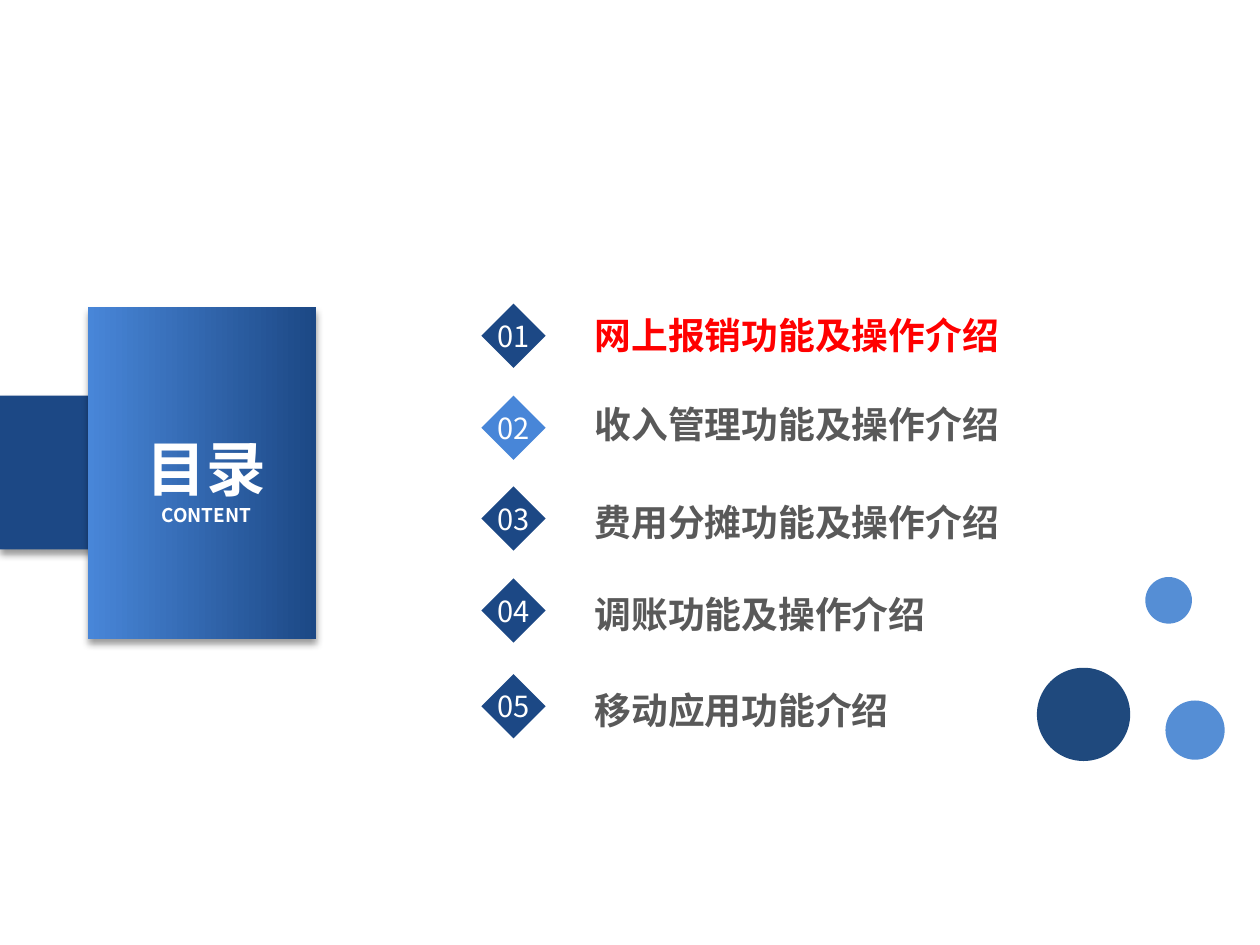
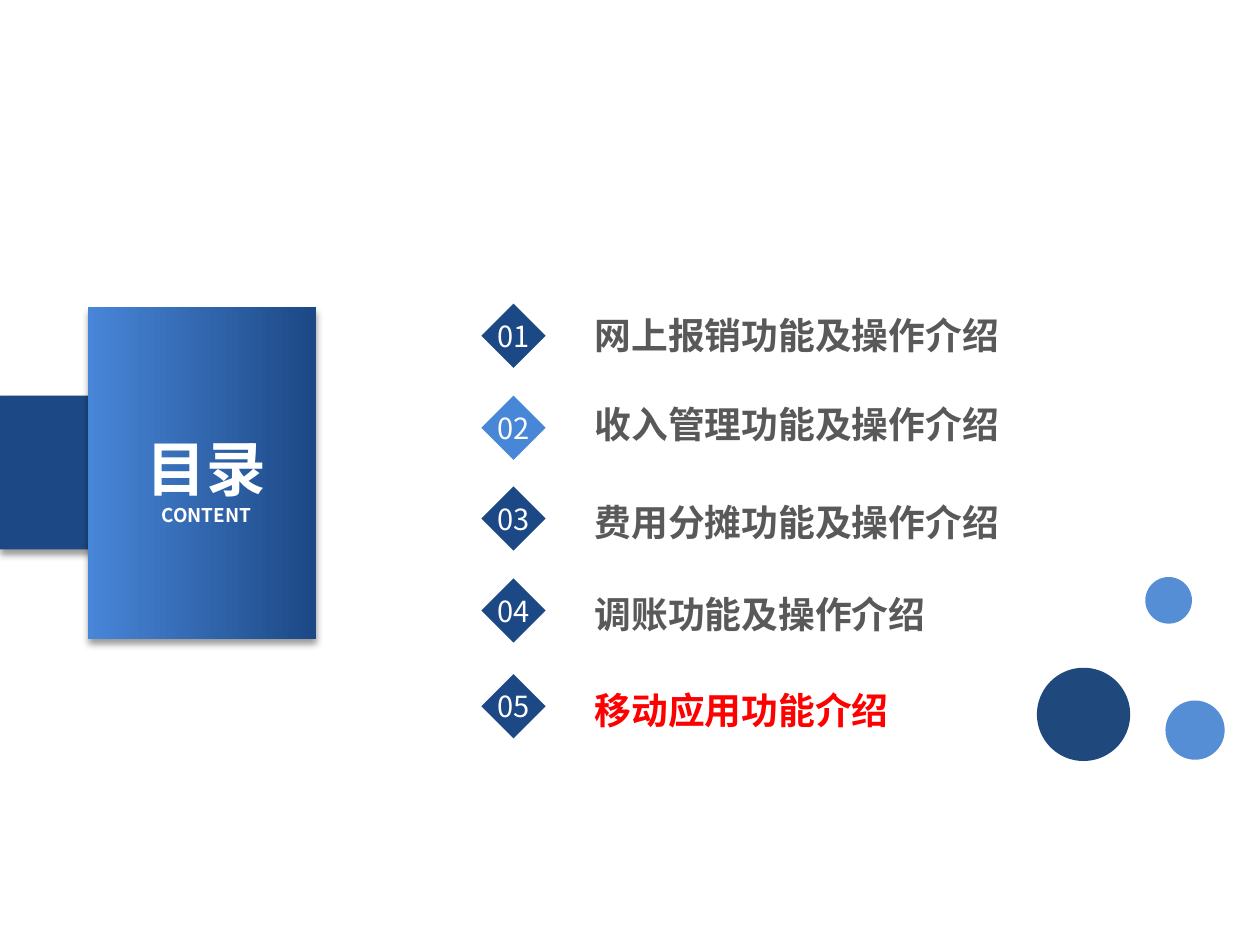
from dataclasses import dataclass

from lxml import etree
from pptx import Presentation
from pptx import util as u
from pptx.dml import color
from pptx.enum import shapes, text
from pptx.oxml import ns

TITLE = "目录"
SUBTITLE = "CONTENT"
SECTIONS = [
    ("网上报销功能及操作介绍", 2.41, 2.63),
    ("收入管理功能及操作介绍", 3.14, 3.34),
    ("费用分摊功能及操作介绍", 3.86, 4.12),
    ("调账功能及操作介绍", 4.59, 4.85),
    ("移动应用功能介绍", 5.35, 5.61),
]
LIGHT_SECTION = 2
ACTIVE_SECTIONS = [1, 5]


@dataclass(frozen=True)
class Theme:
    font: str = "Noto Sans CJK SC"
    navy: str = "1C4885"
    blue: str = "4886D8"
    dark_dot: str = "1F497D"
    light_dot: str = "558ED5"
    label: str = "595959"
    active: str = "FF0000"
    white: str = "FFFFFF"
    shadow: str = "000000"
    title_size: float = 34.1
    subtitle_size: float = 10.8
    number_size: float = 16.6
    label_size: float = 21


THEME = Theme()
DOTS = [
    (9.25, 5.56, 0.47, THEME.light_dot),
    (8.23, 5.3, 0.74, THEME.dark_dot),
    (9.09, 4.58, 0.37, THEME.light_dot),
]
DIAMOND_LEFT, DIAMOND_SIZE = 3.82, 0.51
LABEL_LEFT, LABEL_WIDTH, LABEL_HEIGHT, LABEL_INDENT = 4.33, 3.25, 0.2, 0.39
HEADING_LEFT, HEADING_WIDTH = 1.06, 1.16


def inches(*values):
    return [u.Inches(value) for value in values]


def rgb(value):
    return color.RGBColor.from_string(value)


def add_filled(slide, kind, box, fill):
    shape = slide.shapes.add_shape(kind, *inches(*box))
    shape.shadow.inherit = False
    shape.fill.solid()
    shape.fill.fore_color.rgb = rgb(fill)
    shape.line.fill.background()
    return shape


def add_drop_shadow(shape):
    effects = shape.element.spPr.find(ns.qn("a:effectLst"))
    shadow = etree.SubElement(
        effects, ns.qn("a:outerShdw"), blurRad=str(u.Pt(4)), dist=str(u.Pt(3)),
        dir="5400000", algn="t", rotWithShape="0")
    shade = etree.SubElement(shadow, ns.qn("a:srgbClr"), val=THEME.shadow)
    etree.SubElement(shade, ns.qn("a:alpha"), val="40000")


def write(shape, words, size, ink, bold=False, align=text.PP_ALIGN.CENTER,
          anchor=text.MSO_ANCHOR.TOP, margins=(0.1, 0.05, 0.1, 0.05)):
    frame = shape.text_frame
    frame.text = words
    frame.word_wrap = False
    frame.auto_size = text.MSO_AUTO_SIZE.NONE
    frame.vertical_anchor = anchor
    (frame.margin_left, frame.margin_top,
     frame.margin_right, frame.margin_bottom) = inches(*margins)
    paragraph = frame.paragraphs[0]
    paragraph.alignment = align
    run = paragraph.runs[0]
    run.font.name = THEME.font
    run.font.size = u.Pt(size)
    run.font.bold = bold
    run.font.color.rgb = rgb(ink)
    etree.SubElement(run.font._element, ns.qn("a:ea"), typeface=THEME.font)


def add_heading(slide):
    rectangle = shapes.MSO_SHAPE.RECTANGLE
    band = add_filled(slide, rectangle, (0, 3.14, 2.4, 1.22), THEME.navy)
    panel = add_filled(slide, rectangle, (0.7, 2.44, 1.81, 2.63), THEME.blue)
    panel.fill.gradient()
    panel.fill.gradient_angle = 0
    for stop, position, tint in zip(panel.fill.gradient_stops, (0, 1), (THEME.blue, THEME.navy)):
        stop.position = position
        stop.color.rgb = rgb(tint)
    for shape in (band, panel):
        add_drop_shadow(shape)

    title = slide.shapes.title
    title.left, title.top, title.width, title.height = inches(
        HEADING_LEFT, 3.38, HEADING_WIDTH, 0.63)
    panel.element.addnext(title.element)
    write(title, TITLE, THEME.title_size, THEME.white, bold=True)
    subtitle = slide.shapes.add_textbox(*inches(HEADING_LEFT, 3.95, HEADING_WIDTH, 0.25))
    write(subtitle, SUBTITLE, THEME.subtitle_size, THEME.white, bold=True)


def add_section(slide, number, section, active):
    words, diamond_top, label_top = section
    fill = THEME.blue if number == LIGHT_SECTION else THEME.navy
    diamond = add_filled(slide, shapes.MSO_SHAPE.DIAMOND,
                         (DIAMOND_LEFT, diamond_top, DIAMOND_SIZE, DIAMOND_SIZE), fill)
    write(diamond, f"{number:02}", THEME.number_size, THEME.white,
          anchor=text.MSO_ANCHOR.MIDDLE, margins=(0, 0, 0, 0))
    label = slide.shapes.add_textbox(*inches(LABEL_LEFT, label_top, LABEL_WIDTH, LABEL_HEIGHT))
    write(label, words, THEME.label_size, THEME.active if active else THEME.label,
          bold=True, align=text.PP_ALIGN.LEFT, anchor=text.MSO_ANCHOR.BOTTOM,
          margins=(LABEL_INDENT, 0, 0, 0))


def add_contents_slide(presentation, active_section):
    slide = presentation.slides.add_slide(presentation.slide_layouts.get_by_name("Title Only"))
    add_heading(slide)
    for number, section in enumerate(SECTIONS, 1):
        add_section(slide, number, section, number == active_section)
    for left, top, size, fill in DOTS:
        add_filled(slide, shapes.MSO_SHAPE.OVAL, (left, top, size, size), fill)


def main():
    presentation = Presentation()
    presentation.slide_width, presentation.slide_height = inches(10, 7.5)
    for active_section in ACTIVE_SECTIONS:
        add_contents_slide(presentation, active_section)
    presentation.save("out.pptx")


if __name__ == "__main__":
    main()
